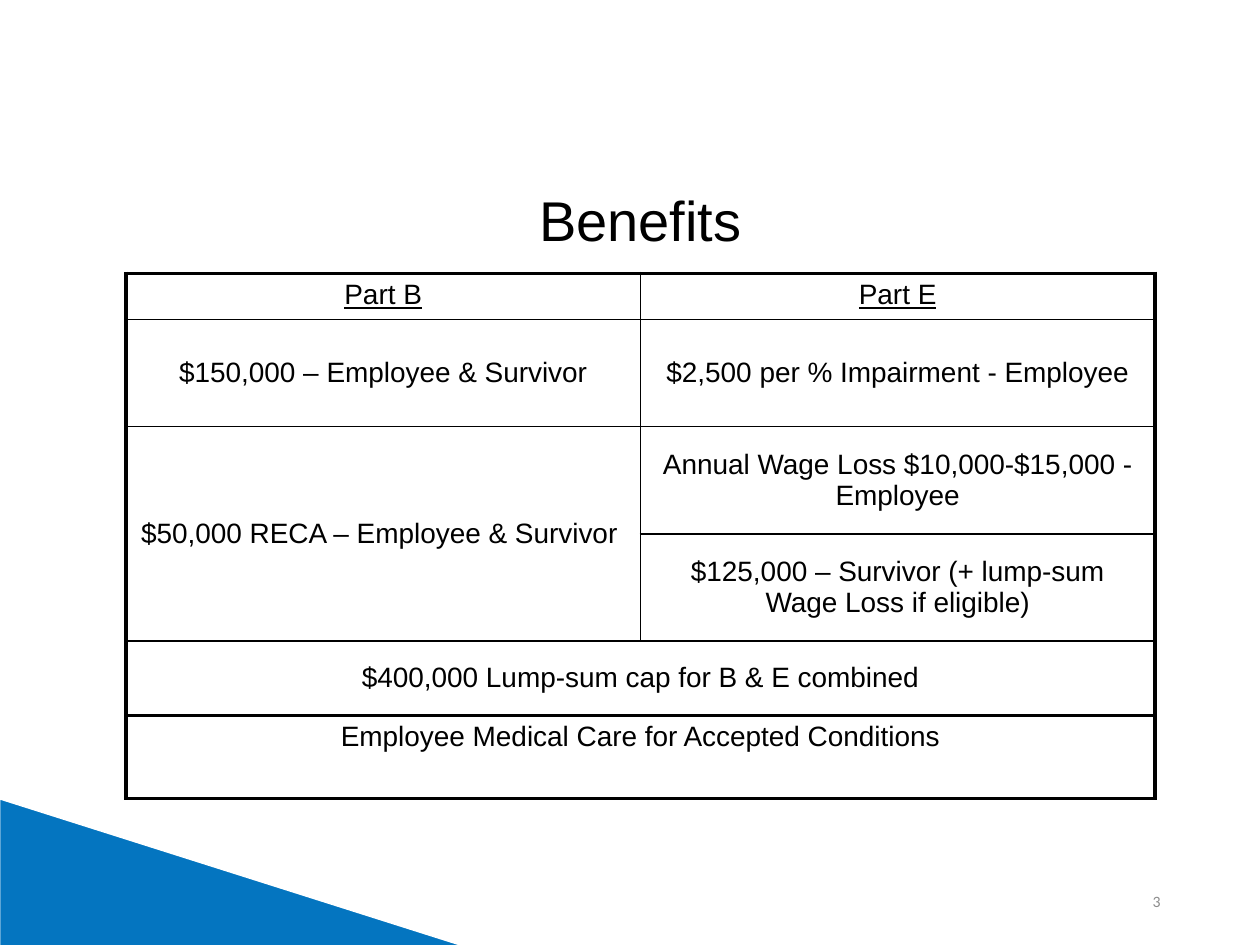
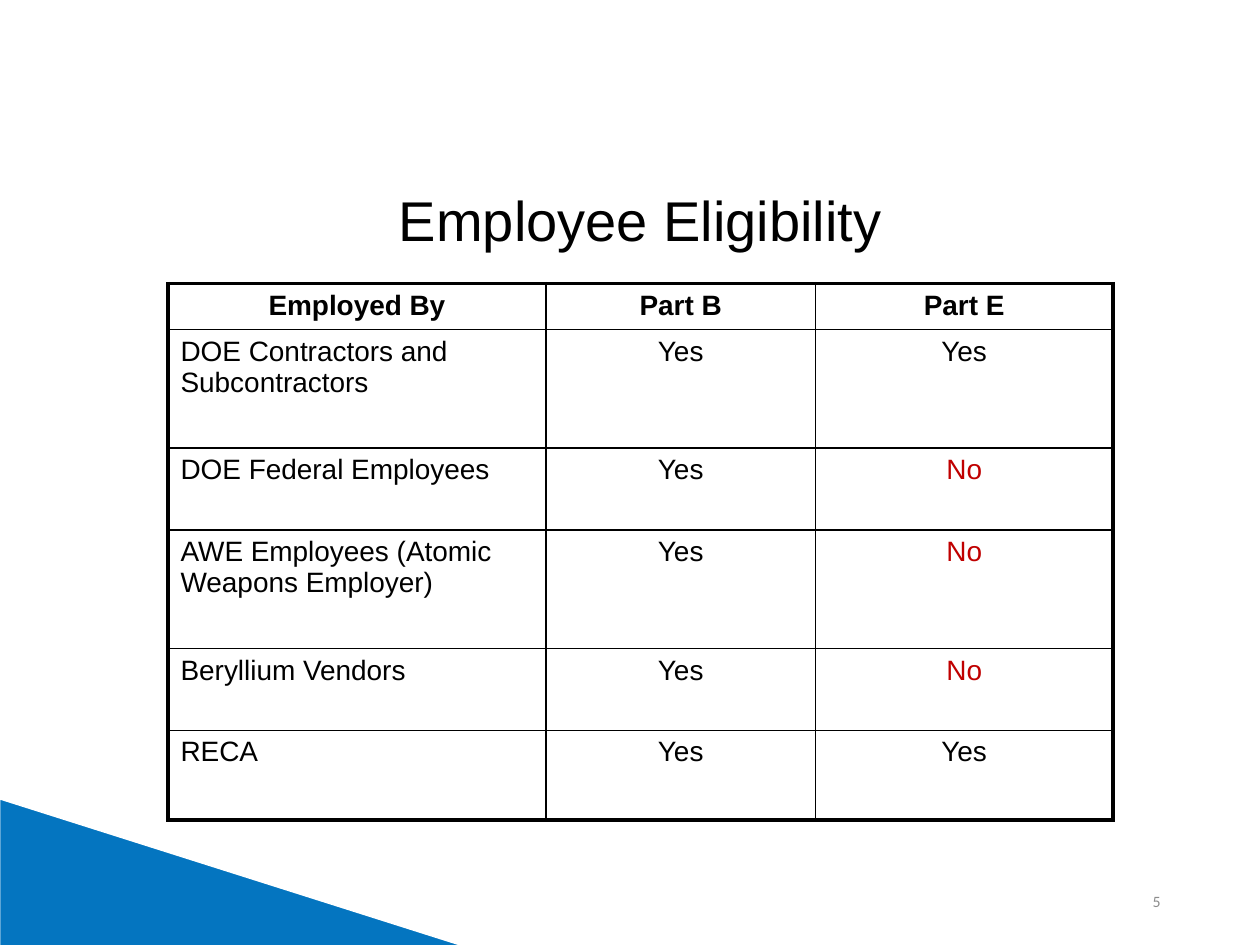
import pptx
import pptx.util
import pptx.dml.color
import pptx.enum.shapes
import pptx.enum.text
import pptx.oxml.ns
from dataclasses import dataclass
from lxml import etree

Pt = pptx.util.Pt
RGB = pptx.dml.color.RGBColor.from_string
ALIGN = pptx.enum.text.PP_ALIGN
ANCHOR = pptx.enum.text.MSO_ANCHOR


@dataclass(frozen=True)
class Theme:
    blue: str = "0475C0"
    white: str = "FFFFFF"
    black: str = "000000"
    red: str = "C00000"
    gray: str = "8C8C8C"
    font: str = "Arial"
    number_font: str = "Calibri"
    title_size: float = 32
    cell_size: float = 16
    number_size: float = 9
    thin: float = 1
    heavy: float = 2.25


theme = Theme()


def style(p, size, color, align, font=theme.font):
    p.alignment = align
    p.font.name, p.font.size = font, Pt(size)
    p.font.color.rgb = RGB(color)


def set_borders(cell, heavy_edges):
    """Draw all four cell edges, the ones named in heavy_edges thicker."""
    tcPr = cell._tc.get_or_add_tcPr()
    for edge in "LRTB":
        width = theme.heavy if edge in heavy_edges else theme.thin
        ln = etree.SubElement(tcPr, pptx.oxml.ns.qn(f"a:ln{edge}"), w=str(Pt(width)))
        fill = etree.SubElement(ln, pptx.oxml.ns.qn("a:solidFill"))
        etree.SubElement(fill, pptx.oxml.ns.qn("a:srgbClr"), val=theme.black)


# None marks a cell covered by a merge
slides = [
    dict(
        title="Benefits", number="3", left=72, top=156.2,
        cols=[294, 294], rows=[26, 61.2, 61.2, 61.2, 42.5, 47.5],
        merges=[(2, 0, 3, 0), (4, 0, 4, 1), (5, 0, 5, 1)],
        heavy_rules=[0, 5, 6], middle_rows=range(1, 5),
        header=dict(underline=True, bold=False), first_align=ALIGN.CENTER,
        cells=[
            ["Part B", "Part E"],
            ["$150,000 – Employee & Survivor", "$2,500 per % Impairment - Employee"],
            ["$50,000 RECA – Employee & Survivor ",
             "Annual Wage Loss $10,000-$15,000 - Employee"],
            [None, "$125,000 – Survivor (+ lump-sum Wage Loss if eligible)"],
            ["$400,000 Lump-sum cap for B & E combined", None],
            ["Employee Medical Care for Accepted Conditions", None],
        ],
    ),
    dict(
        title="Employee Eligibility", number="5", left=96, top=162,
        cols=[216, 154, 170], rows=[26, 67.7, 46.8, 67.7, 46.8, 51.1],
        merges=[], heavy_rules=[0, 6], middle_rows=[],
        header=dict(underline=False, bold=True), first_align=ALIGN.LEFT,
        cells=[
            ["Employed By", "Part B", "Part E"],
            ["DOE Contractors and Subcontractors", "Yes", "Yes"],
            ["DOE Federal Employees", "Yes", "No"],
            ["AWE Employees (Atomic Weapons Employer)", "Yes", "No"],
            ["Beryllium Vendors", "Yes", "No"],
            ["RECA", "Yes", "Yes"],
        ],
    ),
]

prs = pptx.Presentation()
prs.slide_width, prs.slide_height = Pt(720), Pt(540)
title_only = prs.slide_layouts[5]

for content in slides:
    s = prs.slides.add_slide(title_only)

    corner = s.shapes.add_shape(pptx.enum.shapes.MSO_SHAPE.RIGHT_TRIANGLE,
                                Pt(-0.5), Pt(456), Pt(268), Pt(85))
    corner.shadow.inherit = False
    corner.fill.solid()
    corner.fill.fore_color.rgb = RGB(theme.blue)
    corner.line.color.rgb = RGB(theme.white)
    corner.line.width = Pt(1.5)

    number = s.shapes.add_textbox(Pt(508.3), Pt(500.5), Pt(162), Pt(28.75))
    tf = number.text_frame
    tf.word_wrap = True
    tf.vertical_anchor = ANCHOR.MIDDLE
    tf.text = content["number"]
    style(tf.paragraphs[0], theme.number_size, theme.gray, ALIGN.RIGHT, theme.number_font)

    title = s.shapes.title
    title.left, title.top, title.width, title.height = Pt(66), Pt(102.5), Pt(600), Pt(46)
    tf = title.text_frame
    tf.text = content["title"]
    tf.auto_size = pptx.enum.text.MSO_AUTO_SIZE.NONE
    tf.vertical_anchor = ANCHOR.TOP
    style(tf.paragraphs[0], theme.title_size, theme.black, ALIGN.CENTER)

    cols, rows = content["cols"], content["rows"]
    table = s.shapes.add_table(len(rows), len(cols), Pt(content["left"]), Pt(content["top"]),
                               Pt(sum(cols)), Pt(sum(rows))).table
    table.first_row = table.horz_banding = False
    for column, width in zip(table.columns, cols):
        column.width = Pt(width)
    for row, height in zip(table.rows, rows):
        row.height = Pt(height)
    for top, left, bottom, right in content["merges"]:
        table.cell(top, left).merge(table.cell(bottom, right))

    for i, texts in enumerate(content["cells"]):
        for j, text in enumerate(texts):
            cell = table.cell(i, j)
            heavy_edges = ""
            if j == 0:
                heavy_edges += "L"
            if j + cell.span_width == len(cols):
                heavy_edges += "R"
            if i in content["heavy_rules"]:
                heavy_edges += "T"
            if i + cell.span_height in content["heavy_rules"]:
                heavy_edges += "B"
            set_borders(cell, heavy_edges)
            cell.fill.solid()
            cell.fill.fore_color.rgb = RGB(theme.white)
            if text is None:
                continue
            cell.text = text
            cell.vertical_anchor = ANCHOR.MIDDLE if i in content["middle_rows"] else ANCHOR.TOP
            p = cell.text_frame.paragraphs[0]
            align = content["first_align"] if i > 0 and j == 0 else ALIGN.CENTER
            style(p, theme.cell_size, theme.red if text == "No" else theme.black, align)
            if i == 0:
                p.font.bold = content["header"]["bold"]
                p.font.underline = content["header"]["underline"]

prs.save("out.pptx")
